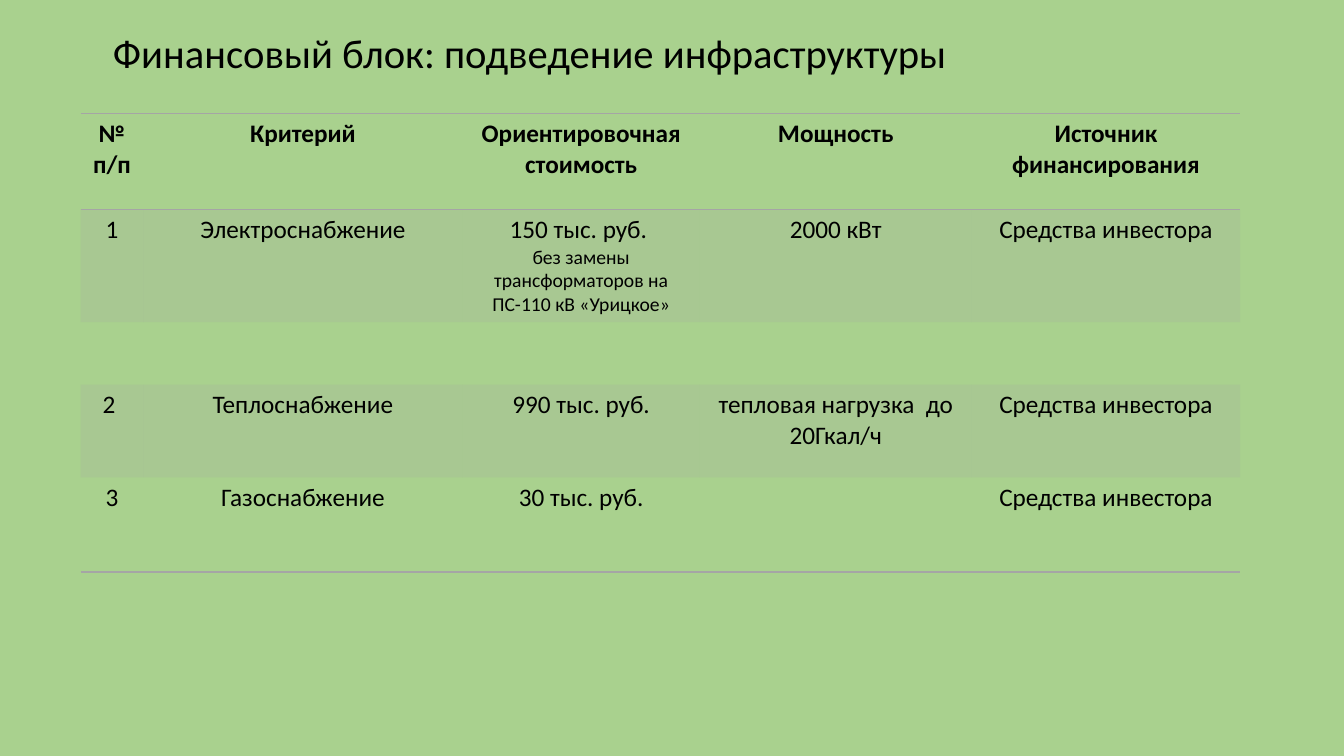
from lxml import etree
from pptx import Presentation
from pptx import util as u
from pptx.dml.color import RGBColor
from pptx.enum import text
from pptx.oxml.ns import qn

COLORS = {"background": "A9D18E", "text": "000000", "grey": "A5A5A5"}
TITLE_FONT = {"name": "Calibri", "size": u.Pt(29), "bold": False}
HEADER_FONT = {"name": "Calibri", "size": u.Pt(18), "bold": True}
BODY_FONT = {**HEADER_FONT, "bold": False}
NOTE_FONT = {**BODY_FONT, "size": u.Pt(14)}

COLUMN_WIDTHS = [0.62, 3.17, 2.35, 2.7, 2.66]
ROW_HEIGHTS = [0.95, 1.11, 0.62, 0.92, 0.94]
SOURCE = "Средства инвестора"
ROWS = [
    ["№ п/п", "Критерий", "Ориентировочная стоимость", "Мощность", "Источник финансирования"],
    ["1", "Электроснабжение",
     "150 тыс. руб. \nбез замены трансформаторов на ПС-110 кВ «Урицкое»",
     "2000 кВт", SOURCE],
    [""] * 5,
    ["2 ", "Теплоснабжение", "990 тыс. руб.", "тепловая нагрузка  до 20Гкал/ч", SOURCE],
    ["3", "Газоснабжение", "30 тыс. руб.", "", SOURCE],
]


def format_font(font, values):
    for name, value in values.items():
        setattr(font, name, value)
    font.color.rgb = RGBColor.from_string(COLORS["text"])


def set_title(slide, wording):
    title = slide.shapes.title
    title.left, title.top, title.width, title.height = map(u.Inches, (1.02, 0.13, 11.5, 0.84))
    frame = title.text_frame
    frame.text = wording
    frame.auto_size = text.MSO_AUTO_SIZE.NONE
    frame.vertical_anchor = text.MSO_ANCHOR.MIDDLE
    paragraph = frame.paragraphs[0]
    paragraph.alignment = text.PP_ALIGN.LEFT
    paragraph.line_spacing = 0.9
    format_font(paragraph.font, TITLE_FONT)


def set_borders(cell, visible):
    properties = cell._tc.get_or_add_tcPr()
    for side in ("lnL", "lnR", "lnT", "lnB"):
        line = etree.SubElement(properties, qn("a:" + side), w=str(u.Pt(1)))
        if side in visible:
            fill = etree.SubElement(line, qn("a:solidFill"))
            etree.SubElement(fill, qn("a:srgbClr"), val=COLORS["grey"])
        else:
            etree.SubElement(line, qn("a:noFill"))


def set_fill(cell, banded):
    if not banded:
        cell.fill.background()
        return
    cell.fill.solid()
    cell.fill.fore_color.rgb = RGBColor.from_string(COLORS["grey"])
    color = cell._tc.tcPr.find(qn("a:solidFill")).find(qn("a:srgbClr"))
    etree.SubElement(color, qn("a:alpha"), val="20000")


def write_cell(cell, wording, main_font):
    cell.text = wording
    for index, paragraph in enumerate(cell.text_frame.paragraphs):
        paragraph.alignment = text.PP_ALIGN.CENTER
        format_font(paragraph.font, NOTE_FONT if index else main_font)


def add_cost_table(slide):
    frame = slide.shapes.add_table(
        len(ROWS), len(COLUMN_WIDTHS), u.Inches(0.8), u.Inches(1.13),
        u.Inches(sum(COLUMN_WIDTHS)), u.Inches(sum(ROW_HEIGHTS)))
    table = frame.table
    table.first_row = table.horz_banding = False
    for column, width in zip(table.columns, COLUMN_WIDTHS):
        column.width = u.Inches(width)
    last = len(ROWS) - 1
    for index, (row, height) in enumerate(zip(table.rows, ROW_HEIGHTS)):
        row.height = u.Inches(height)
        visible = {side for side, lined in (("lnT", (0, 1)), ("lnB", (0, last)))
                   if index in lined}
        for cell, wording in zip(row.cells, ROWS[index]):
            write_cell(cell, wording, BODY_FONT if index else HEADER_FONT)
            set_borders(cell, visible)
            set_fill(cell, index % 2 == 1)


def main():
    presentation = Presentation()
    presentation.slide_width = u.Inches(13.33)
    presentation.slide_height = u.Inches(7.5)
    slide = presentation.slides.add_slide(presentation.slide_layouts[5])
    slide.background.fill.solid()
    slide.background.fill.fore_color.rgb = RGBColor.from_string(COLORS["background"])
    set_title(slide, "Финансовый блок: подведение инфраструктуры")
    add_cost_table(slide)
    presentation.save("out.pptx")


if __name__ == "__main__":
    main()
